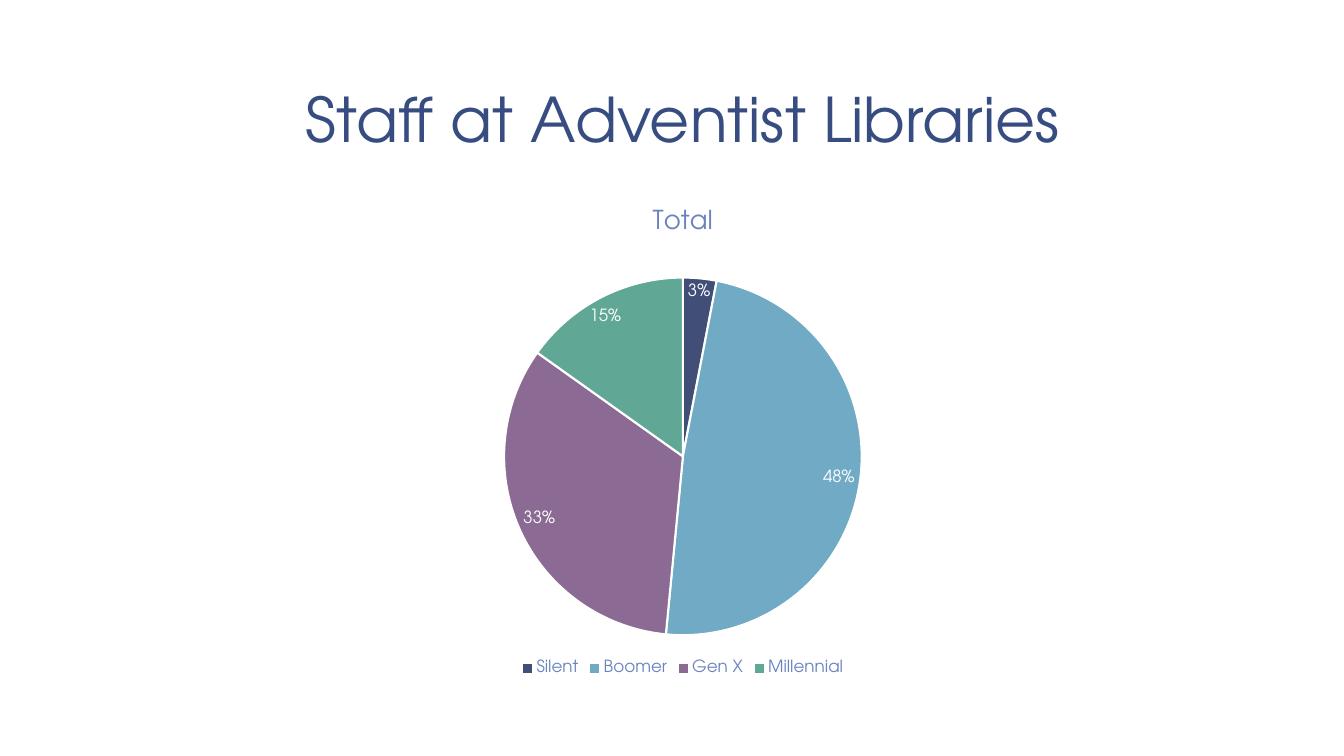
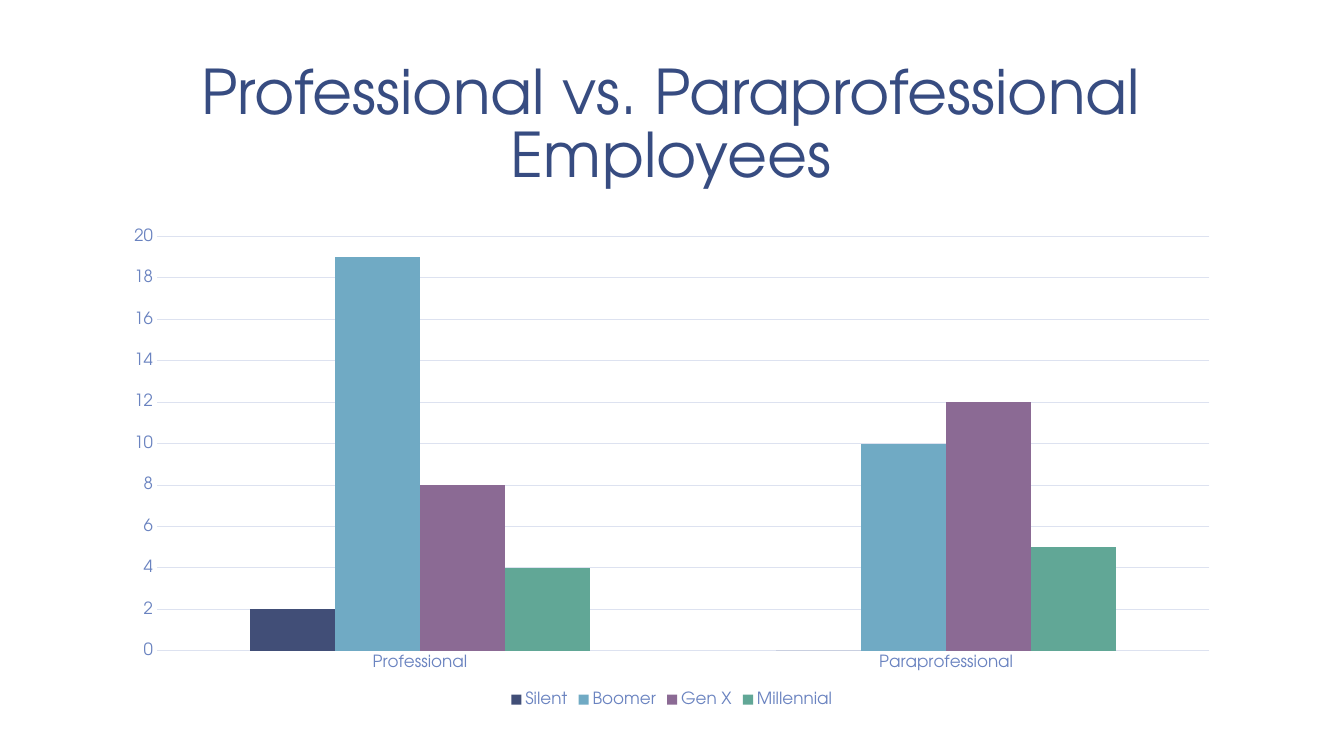
from dataclasses import dataclass

from pptx import Presentation
from pptx.chart.data import CategoryChartData
from pptx.dml.color import RGBColor
from pptx.enum.chart import XL_CHART_TYPE as ChartType
from pptx.enum.chart import XL_LABEL_POSITION as LabelPosition
from pptx.enum.chart import XL_LEGEND_POSITION as LegendPosition
from pptx.enum.chart import XL_TICK_MARK as TickMark
from pptx.enum.text import MSO_ANCHOR as Anchor
from pptx.enum.text import MSO_AUTO_SIZE as AutoSize
from pptx.enum.text import PP_ALIGN as Align
from pptx.util import Cm, Pt


@dataclass(frozen=True)
class Theme:
    font: str = "TeX Gyre Adventor"
    background: str = "FFFFFF"
    title: str = "374C81"
    label: str = "6A83C0"
    grid: str = "DDE2F0"
    generations: tuple = ("414E77", "70AAC4", "8B6A94", "61A796")
    title_size: float = 44
    chart_title_size: float = 18.6
    label_size: float = 12
    chart_size: float = 10
    grid_width: float = 0.75
    wedge_width: float = 1.5


THEME = Theme()
GENERATIONS = ("Silent", "Boomer", "Gen X", "Millennial")
CHART_SIZE = (28.22, 12.42)


def rgb(code):
    return RGBColor.from_string(code)


def style_font(font, size, color):
    font.name = THEME.font
    font.size = Pt(size)
    font.bold = False
    font.color.rgb = rgb(color)


def style_line(line, color, width):
    line.color.rgb = rgb(color)
    line.width = Pt(width)


def fill_solid(fill, color):
    fill.solid()
    fill.fore_color.rgb = rgb(color)


def add_titled_slide(prs, text, left, top, width, height):
    slide = prs.slides.add_slide(prs.slide_layouts.get_by_name("Title Only"))
    title = slide.shapes.title
    title.left, title.top = Cm(left), Cm(top)
    title.width, title.height = Cm(width), Cm(height)
    frame = title.text_frame
    frame.text = text
    frame.word_wrap = True
    frame.auto_size = AutoSize.NONE
    frame.vertical_anchor = Anchor.BOTTOM
    frame.margin_left = frame.margin_right = Cm(0.33)
    frame.margin_top = frame.margin_bottom = Cm(0.18)
    heading = frame.paragraphs[0]
    heading.alignment = Align.CENTER
    heading.line_spacing = 0.85
    style_font(heading.runs[0].font, THEME.title_size, THEME.title)
    return slide


def add_chart(slide, kind, left, top, categories, series):
    data = CategoryChartData()
    data.categories = categories
    for name, values in series:
        data.add_series(name, values)
    place = [Cm(length) for length in (left, top, *CHART_SIZE)]
    chart = slide.shapes.add_chart(kind, *place, data).chart
    style_font(chart.font, THEME.chart_size, THEME.title)
    chart.has_title = False
    chart.has_legend = True
    chart.legend.position = LegendPosition.BOTTOM
    chart.legend.include_in_layout = False
    style_font(chart.legend.font, THEME.label_size, THEME.label)
    return chart


def add_pie(slide, left, top, name, values):
    chart = add_chart(slide, ChartType.PIE, left, top, GENERATIONS, [(name, values)])
    chart.has_title = True
    caption = chart.chart_title.text_frame
    caption.text = name
    style_font(caption.paragraphs[0].runs[0].font, THEME.chart_title_size, THEME.label)
    pie = chart.plots[0]
    pie.vary_by_categories = True
    for index, color in enumerate(THEME.generations):
        wedge = pie.series[0].points[index].format
        fill_solid(wedge.fill, color)
        style_line(wedge.line, THEME.background, THEME.wedge_width)
    pie.has_data_labels = True
    labels = pie.data_labels
    labels.show_percentage = True
    labels.show_value = False
    labels.number_format = "0%"
    labels.number_format_is_linked = False
    labels.position = LabelPosition.BEST_FIT
    style_font(labels.font, THEME.label_size, THEME.background)


def add_columns(slide, left, top, categories, values):
    chart = add_chart(slide, ChartType.COLUMN_CLUSTERED, left, top,
                      categories, zip(GENERATIONS, values))
    plot = chart.plots[0]
    plot.vary_by_categories = False
    plot.gap_width = 219
    plot.overlap = 0
    for series, color in zip(plot.series, THEME.generations):
        fill_solid(series.format.fill, color)
    for axis in (chart.category_axis, chart.value_axis):
        axis.major_tick_mark = axis.minor_tick_mark = TickMark.NONE
        style_font(axis.tick_labels.font, THEME.label_size, THEME.label)
    style_line(chart.category_axis.format.line, THEME.grid, THEME.grid_width)
    counts = chart.value_axis
    counts.minimum_scale, counts.maximum_scale, counts.major_unit = 0, 20, 2
    counts.format.line.fill.background()
    counts.has_major_gridlines = True
    style_line(counts.major_gridlines.format.line, THEME.grid, THEME.grid_width)


def main():
    """Build the two slides on library staff by generation."""
    prs = Presentation()
    prs.slide_width, prs.slide_height = Cm(33.87), Cm(19.05)
    fill_solid(prs.slide_master.background.fill, THEME.background)

    staff = add_titled_slide(prs, "Staff at Adventist Libraries", 3.1, 1.27, 28.22, 2.82)
    add_pie(staff, 3.1, 4.72, "Total", (3, 48, 33, 15))

    roles = add_titled_slide(prs, "Professional vs. Paraprofessional Employees",
                             1.04, 1.07, 31.75, 3.89)
    add_columns(roles, 2.82, 5.51, ("Professional", "Paraprofessional"),
                ((2, 0), (19, 10), (8, 12), (4, 5)))

    prs.save("out.pptx")


if __name__ == "__main__":
    main()
